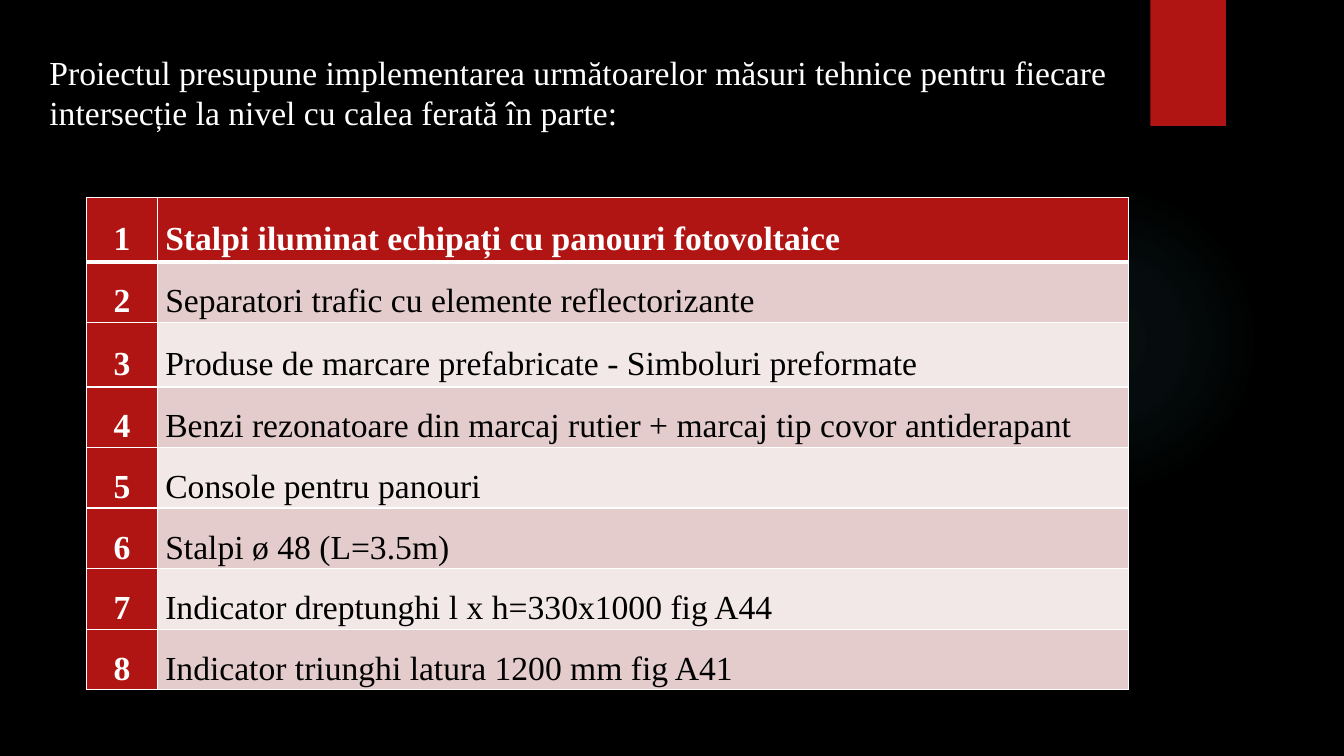
from lxml.etree import SubElement
from pptx import Presentation
from pptx.dml.color import RGBColor
from pptx.enum.shapes import MSO_SHAPE
from pptx.enum.text import MSO_ANCHOR, MSO_AUTO_SIZE, PP_ALIGN
from pptx.oxml import parse_xml
from pptx.oxml.ns import nsdecls, qn
from pptx.util import Inches, Pt

TITLE = ("Proiectul presupune implementarea următoarelor măsuri tehnice pentru fiecare "
         "intersecție la nivel cu calea ferată în parte:")
MEASURES = [
    "Stalpi iluminat echipați cu panouri fotovoltaice",
    "Separatori trafic cu elemente reflectorizante",
    "Produse de marcare prefabricate - Simboluri preformate",
    "Benzi rezonatoare din marcaj rutier + marcaj tip covor antiderapant",
    "Console pentru panouri",
    "Stalpi ø 48 (L=3.5m)",
    "Indicator dreptunghi l x h=330x1000 fig A44",
    "Indicator triunghi latura 1200 mm fig A41",
]
COLUMNS = [0.7, 9.63]
ROW, TALL_ROW, TALL_ROWS = 0.6, 0.64, (0, 2)
RED, BLACK, WHITE = "B01513", "000000", "FFFFFF"
BANDS = ["F2E8E7", "E4CCCC"]
GLOW, GLOW_STOPS = "50B9C1", [(0, 7), (36, 6), (69, 0)]  # position %, opacity %
FONT, SIZE = "Times New Roman", 24


def rgb(value):
    return RGBColor.from_string(value)


def box(left, top, width, height):
    return [Inches(v) for v in (left, top, width, height)]


def add_run(p, text, color, bold=False):
    r = p.add_run()
    r.text = text
    r.font.name, r.font.size, r.font.bold = FONT, Pt(SIZE), bold
    r.font.color.rgb = rgb(color)


def add_plain_shape(s, kind, *place):
    sp = s.shapes.add_shape(kind, *box(*place))
    sp.shadow.inherit = False
    sp.line.fill.background()
    return sp


def add_glow(s):
    sp = add_plain_shape(s, MSO_SHAPE.OVAL, 9.41, 1.83, 3.08, 3.08)
    stops = "".join(
        f'<a:gs pos="{pos * 1000}"><a:srgbClr val="{GLOW}">'
        f'<a:alpha val="{alpha * 1000}"/></a:srgbClr></a:gs>' for pos, alpha in GLOW_STOPS)
    sp._element.spPr.find(qn("a:prstGeom")).addnext(parse_xml(
        f'<a:gradFill {nsdecls("a")}><a:gsLst>{stops}</a:gsLst><a:path path="circle">'
        '<a:fillToRect l="50000" t="50000" r="50000" b="50000"/></a:path></a:gradFill>'))


def set_borders(cell, top, bottom):
    """White borders; top and bottom widths in points, sides 1 pt."""
    tcPr = cell._tc.get_or_add_tcPr()
    for side, width in (("L", 1), ("R", 1), ("T", top), ("B", bottom)):
        ln = SubElement(tcPr, qn(f"a:ln{side}"), w=str(Pt(width)))
        SubElement(SubElement(ln, qn("a:solidFill")), qn("a:srgbClr"), val=WHITE)


def fill_cell(cell, row, text, fill, color, bold, align):
    set_borders(cell, top=3 if row == 1 else 1, bottom=3 if row == 0 else 1)
    cell.fill.solid()
    cell.fill.fore_color.rgb = rgb(fill)
    cell.vertical_anchor = MSO_ANCHOR.MIDDLE
    cell.margin_left = cell.margin_right = Inches(0.08)
    cell.margin_top = cell.margin_bottom = 0
    p = cell.text_frame.paragraphs[0]
    p.alignment, p.line_spacing = align, 1.5
    add_run(p, text, color, bold)


def add_measures(s):
    heights = [TALL_ROW if i in TALL_ROWS else ROW for i in range(len(MEASURES))]
    table = s.shapes.add_table(len(MEASURES), len(COLUMNS),
                               *box(0.86, 1.96, sum(COLUMNS), sum(heights))).table
    for column, width in zip(table.columns, COLUMNS):
        column.width = Inches(width)
    for i, (text, height) in enumerate(zip(MEASURES, heights)):
        table.rows[i].height = Inches(height)
        head = i == 0
        fill_cell(table.cell(i, 0), i, str(i + 1), RED, WHITE, True, PP_ALIGN.CENTER)
        fill_cell(table.cell(i, 1), i, text, RED if head else BANDS[i % 2],
                  WHITE if head else BLACK, head, PP_ALIGN.LEFT)


def add_title(s):
    title = s.shapes.title
    title.left, title.top, title.width, title.height = box(0.39, 0.46, 12.11, 0.91)
    tf = title.text_frame
    tf.word_wrap, tf.auto_size = True, MSO_AUTO_SIZE.SHAPE_TO_FIT_TEXT
    tf.vertical_anchor = MSO_ANCHOR.TOP
    p = tf.paragraphs[0]
    p.alignment = PP_ALIGN.LEFT
    add_run(p, TITLE, WHITE)


def main():
    prs = Presentation()
    prs.slide_width, prs.slide_height = Inches(13.33), Inches(7.5)
    s = prs.slides.add_slide(prs.slide_layouts[5])
    s.background.fill.solid()
    s.background.fill.fore_color.rgb = rgb(BLACK)
    add_glow(s)
    ribbon = add_plain_shape(s, MSO_SHAPE.RECTANGLE, 11.41, 0, 0.75, 1.25)
    ribbon.fill.solid()
    ribbon.fill.fore_color.rgb = rgb(RED)
    add_title(s)
    add_measures(s)
    prs.save("out.pptx")


if __name__ == "__main__":
    main()
